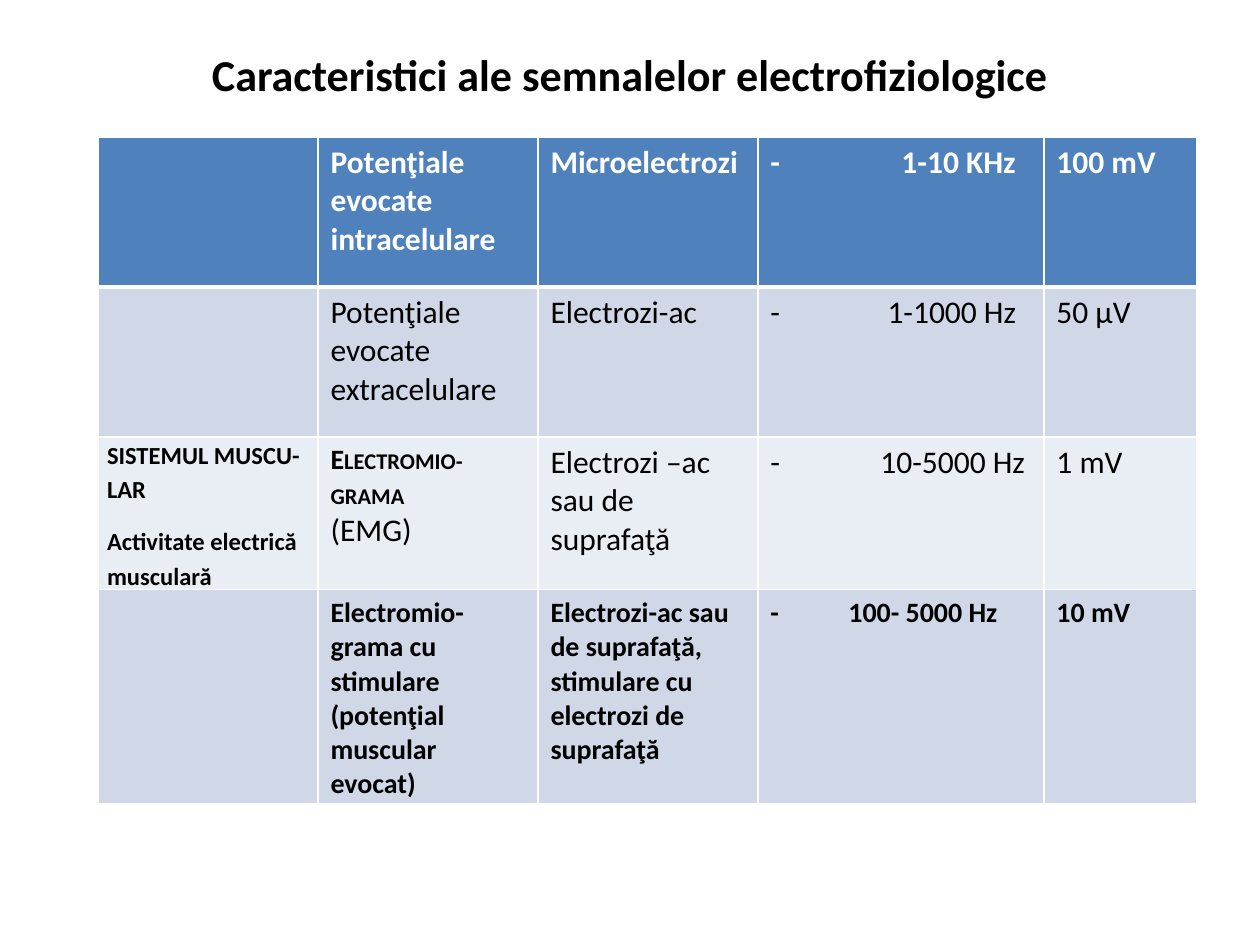
from dataclasses import dataclass

from lxml.etree import SubElement
from pptx import Presentation
from pptx.dml.color import RGBColor
from pptx.enum.text import MSO_ANCHOR, PP_ALIGN
from pptx.oxml import parse_xml
from pptx.oxml.ns import nsdecls, qn
from pptx.util import Emu, Pt

PIXELS_PER_INCH = 126


def px(length):
    return Emu(round(length * 914400 / PIXELS_PER_INCH))


@dataclass(frozen=True)
class Theme:
    font: str = "Calibri"
    black: str = "000000"
    white: str = "FFFFFF"
    header: str = "4F81BD"
    band_dark: str = "D0D8E8"
    band_light: str = "E9EDF4"
    title_size: float = 25.2
    body_size: int = 18
    detail_size: int = 16
    system_size: int = 14


@dataclass(frozen=True)
class Line:
    text: str
    size: float
    bold: bool = False
    small_caps: bool = False
    tab: int = 0


class SlideBuilder:
    def __init__(self, slide, theme):
        self.slide = slide
        self.theme = theme

    def set_lines(self, text_frame, lines, color):
        text_frame.text = "\n".join(line.text for line in lines)
        for paragraph, line in zip(text_frame.paragraphs, lines):
            for run in paragraph.runs:
                run.font.name = self.theme.font
                run.font.size = Pt(line.size)
                run.font.bold = line.bold
                run.font.color.rgb = RGBColor.from_string(color)
                if line.small_caps:
                    run.font._element.set("cap", "small")
            if line.tab:
                properties = paragraph._p.get_or_add_pPr()
                tab_list = SubElement(properties, qn("a:tabLst"))
                SubElement(tab_list, qn("a:tab"), pos=str(px(line.tab)), algn="l")

    def title(self, text, left, top, width, height):
        shape = self.slide.shapes.add_textbox(px(left), px(top), px(width), px(height))
        text_frame = shape.text_frame
        text_frame.word_wrap = True
        text_frame.vertical_anchor = MSO_ANCHOR.MIDDLE
        self.set_lines(text_frame, [Line(text, self.theme.title_size, True)], self.theme.black)
        text_frame.paragraphs[0].alignment = PP_ALIGN.CENTER

    def borders(self, cell, widths):
        properties = cell._tc.get_or_add_tcPr()
        for index, (side, width) in enumerate(zip("LRTB", widths)):
            border = parse_xml(
                f'<a:ln{side} {nsdecls("a")} w="{Pt(width)}"><a:solidFill>'
                f'<a:srgbClr val="{self.theme.white}"/></a:solidFill></a:ln{side}>'
            )
            properties.insert(index, border)

    def table(self, rows, fills, left, top, column_widths, row_height, height):
        shape = self.slide.shapes.add_table(
            len(rows), len(column_widths), px(left), px(top),
            px(sum(column_widths)), px(row_height * len(rows)),
        )
        table = shape.table
        table.horz_banding = False
        for column, width in zip(table.columns, column_widths):
            column.width = px(width)
        for row_index, (row, fill) in enumerate(zip(rows, fills)):
            table.rows[row_index].height = px(row_height)
            is_header = row_index == 0
            color = self.theme.white if is_header else self.theme.black
            for column_index, lines in enumerate(row):
                cell = table.cell(row_index, column_index)
                cell.fill.solid()
                cell.fill.fore_color.rgb = RGBColor.from_string(fill)
                top_width = 3 if row_index == 1 else 1
                self.borders(cell, (1, 1, top_width, 3 if is_header else 1))
                if lines:
                    self.set_lines(cell.text_frame, lines, color)
        shape.height = px(height)
        return table

    def tighten(self, cell):
        cell.margin_left = cell.margin_right = px(9)
        cell.margin_top = cell.margin_bottom = 0
        for paragraph in cell.text_frame.paragraphs:
            paragraph.line_spacing = 1.15
            paragraph.space_after = Pt(10)


def signal_row(texts, size, bold, tab):
    name, electrodes, frequency, amplitude = texts
    names = [Line(text, size, bold) for text in name.split("\n")]
    return [
        [],
        names,
        [Line(electrodes, size, bold)],
        [Line(f"-\t{frequency}", size, bold, tab=tab)],
        [Line(amplitude, size, bold)],
    ]


def main():
    theme = Theme()
    presentation = Presentation()
    presentation.slide_width = px(1260)
    presentation.slide_height = px(945)
    slide = presentation.slides.add_slide(presentation.slide_layouts[6])
    builder = SlideBuilder(slide, theme)

    builder.title("Caracteristici ale semnalelor electrofiziologice", 63, 38, 1134, 71)

    rows = [
        signal_row(
            ("Potenţiale evocate intracelulare", "Microelectrozi", "1-10 KHz", "100 mV"),
            theme.body_size, True, 131,
        ),
        signal_row(
            ("Potenţiale evocate extracelulare", "Electrozi-ac", "1-1000 Hz", "50 μV"),
            theme.body_size, False, 117,
        ),
        signal_row(
            ("(EMG)", "Electrozi –ac sau de suprafaţă", "10-5000 Hz", "1 mV"),
            theme.body_size, False, 110,
        ),
        signal_row(
            (
                "Electromio-grama cu stimulare\n(potenţial muscular evocat)",
                "Electrozi-ac sau de suprafaţă, stimulare cu electrozi de suprafaţă",
                "100- 5000 Hz",
                "10 mV",
            ),
            theme.detail_size, True, 78,
        ),
    ]
    muscle_row = rows[2]
    muscle_row[0] = [
        Line(text, theme.system_size, True)
        for text in ("SISTEMUL MUSCU-LAR", "Activitate electrică musculară")
    ]
    muscle_row[1].insert(0, Line("Electromio-grama", theme.detail_size, True, True))

    fills = (theme.header, theme.band_dark, theme.band_light, theme.band_dark)
    table = builder.table(rows, fills, 98, 137, (220, 220, 220, 286, 153), 150, 667)
    builder.tighten(table.cell(2, 0))

    presentation.save("out.pptx")


if __name__ == "__main__":
    main()
